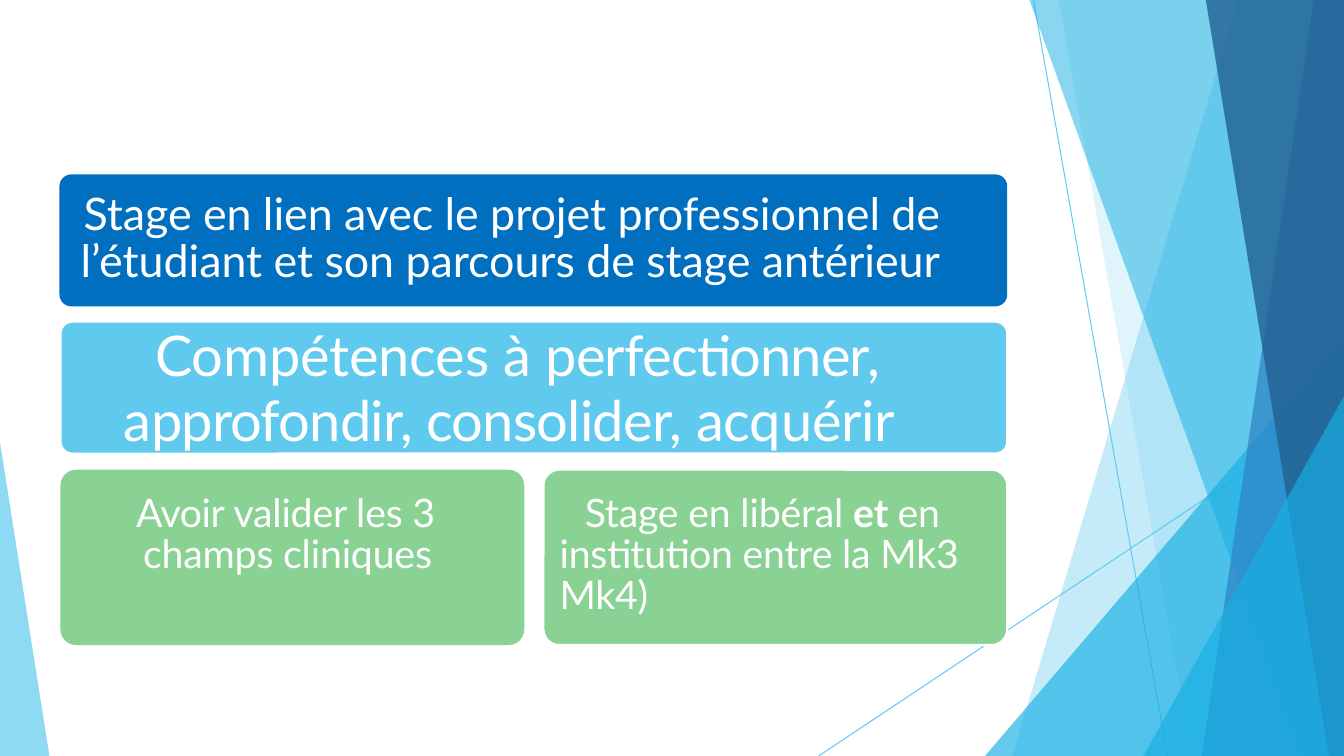
from lxml.etree import SubElement
from pptx import Presentation
from pptx.dml.color import RGBColor
from pptx.enum.shapes import MSO_CONNECTOR, MSO_SHAPE
from pptx.enum.text import MSO_ANCHOR, MSO_AUTO_SIZE, PP_ALIGN
from pptx.oxml.ns import qn
from pptx.util import Emu, Pt

PX = 9144
WIDTH, HEIGHT = 1333, 750
WHITE, SKY, CYAN = "FFFFFF", "5FCAEE", "17AFE3"
BLUE, NAVY, ROYAL, GREEN = "2D83C3", "226192", "006FC0", "89D293"


def px(value):
    return Emu(value * PX)


def color(value):
    return RGBColor.from_string(value)


class SlideBuilder:
    """Holds the text style and the current slide, and draws its elements."""

    def __init__(self, presentation, font="Lato", text_color=WHITE):
        self.font = font
        self.text_color = text_color
        self.slide = presentation.slides.add_slide(presentation.slide_layouts[5])
        self.shapes = self.slide.shapes

    def line(self, start, end):
        connector = self.shapes.add_connector(
            MSO_CONNECTOR.STRAIGHT, *map(px, start + end))
        connector.line.color.rgb = color(SKY)
        connector.line.width = Pt(0.72)
        SubElement(connector._element.spPr, qn("a:effectLst"))

    def facet(self, points, fill, opacity):
        builder = self.shapes.build_freeform(*points[0], scale=PX)
        builder.add_line_segments(points[1:], close=True)
        shape = builder.convert_to_shape()
        shape.shadow.inherit = False
        shape.line.fill.background()
        shape.fill.solid()
        shape.fill.fore_color.rgb = color(fill)
        fill_color = shape._element.spPr.find(
            qn("a:solidFill")).find(qn("a:srgbClr"))
        SubElement(fill_color, qn("a:alpha"), val=str(opacity * 1000))

    def card(self, left, top, width, height, fill, outlined=False):
        shape = self.shapes.add_shape(
            MSO_SHAPE.ROUNDED_RECTANGLE, *map(px, (left, top, width, height)))
        shape.adjustments[0] = 0.09
        shape.shadow.inherit = False
        shape.fill.solid()
        shape.fill.fore_color.rgb = color(fill)
        if outlined:
            shape.line.color.rgb = color(WHITE)
            shape.line.width = Pt(1.56)
        else:
            shape.line.fill.background()

    def title(self, box, runs, **style):
        shape = self.shapes.title
        shape._element.getparent().append(shape._element)
        shape.left, shape.top, shape.width, shape.height = map(px, box)
        self.fill_text(shape.text_frame, runs, **style)

    def text(self, box, runs, **style):
        shape = self.shapes.add_textbox(*map(px, box))
        self.fill_text(shape.text_frame, runs, **style)

    def fill_text(self, frame, runs, size, leading, before, inset, margin, indent):
        frame.word_wrap = True
        frame.auto_size = MSO_AUTO_SIZE.NONE
        frame.vertical_anchor = MSO_ANCHOR.TOP
        frame.margin_left = frame.margin_right = frame.margin_bottom = 0
        frame.margin_top = px(inset)
        paragraph = frame.paragraphs[0]
        paragraph.alignment = PP_ALIGN.LEFT
        paragraph.line_spacing = Pt(leading)
        paragraph.space_before = Pt(before)
        properties = paragraph._p.get_or_add_pPr()
        properties.set("marL", str(px(margin)))
        properties.set("indent", str(px(indent)))
        for content, spacing, bold in runs:
            run = paragraph.add_run()
            run.text = content
            run.font.name = self.font
            run.font.size = Pt(size)
            run.font.bold = bold
            run.font.color.rgb = color(self.text_color)
            run._r.get_or_add_rPr().set("spc", str(spacing))


def draw_background(builder):
    builder.line((1025, 0), (1158, HEIGHT))
    builder.line((WIDTH, 403), (812, HEIGHT))
    top_right, bottom_right = (WIDTH, 0), (WIDTH, HEIGHT)
    for top, bottom, fill, opacity in (
            ((1228, 0), (1004, HEIGHT), SKY, 36),
            ((1050, 0), (1182, HEIGHT), SKY, 20),
            ((WIDTH, 333), (977, HEIGHT), CYAN, 66),
            ((1021, 0), (1291, HEIGHT), CYAN, 50),
            ((1303, 0), (1192, HEIGHT), BLUE, 70),
            ((1196, 0), (1318, HEIGHT), NAVY, 80),
            ((WIDTH, 393), (1134, HEIGHT), CYAN, 66)):
        points = [top, bottom, bottom_right]
        if top[0] < WIDTH:
            points.append(top_right)
        builder.facet(points, fill, opacity)
    builder.facet([(0, 439), (0, HEIGHT), (49, HEIGHT)], SKY, 70)


def main():
    presentation = Presentation()
    presentation.slide_width, presentation.slide_height = px(WIDTH), px(HEIGHT)
    builder = SlideBuilder(presentation)
    draw_background(builder)

    builder.card(59, 173, 940, 131, ROYAL)
    builder.title(
        (79, 182, 900, 103),
        [("Stage en lien avec le projet professionnel de "
          "l’étudiant et son parcours de stage antérieur", -5, False)],
        size=32, leading=33.5, before=6.2, inset=9, margin=1, indent=3)

    builder.card(60, 319, 939, 131, SKY, outlined=True)
    builder.text(
        (122, 315, 814, 134),
        [("Compétences à ", -10, False),
         ("perfectionner, approfondir, consolider, ", -55, False),
         ("acquérir", -10, False)],
        size=40, leading=46.4, before=3.6, inset=5, margin=1, indent=31)

    green_style = dict(size=28, leading=29.3, before=5.5, inset=8)
    builder.card(60, 466, 460, 174, GREEN)
    builder.text(
        (133, 482, 314, 90),
        [("Avoir ", -30, False), ("valider les 3 champs cliniques", -10, False)],
        margin=9, indent=-7, **green_style)

    builder.card(539, 466, 460, 174, GREEN, outlined=True)
    builder.text(
        (554, 482, 430, 130),
        [("Stage en libéral ", -10, False), ("et ", -10, True),
         ("en institution entre la Mk3 Mk4)", -10, False)],
        margin=1, indent=25, **green_style)

    presentation.save("out.pptx")


if __name__ == "__main__":
    main()
